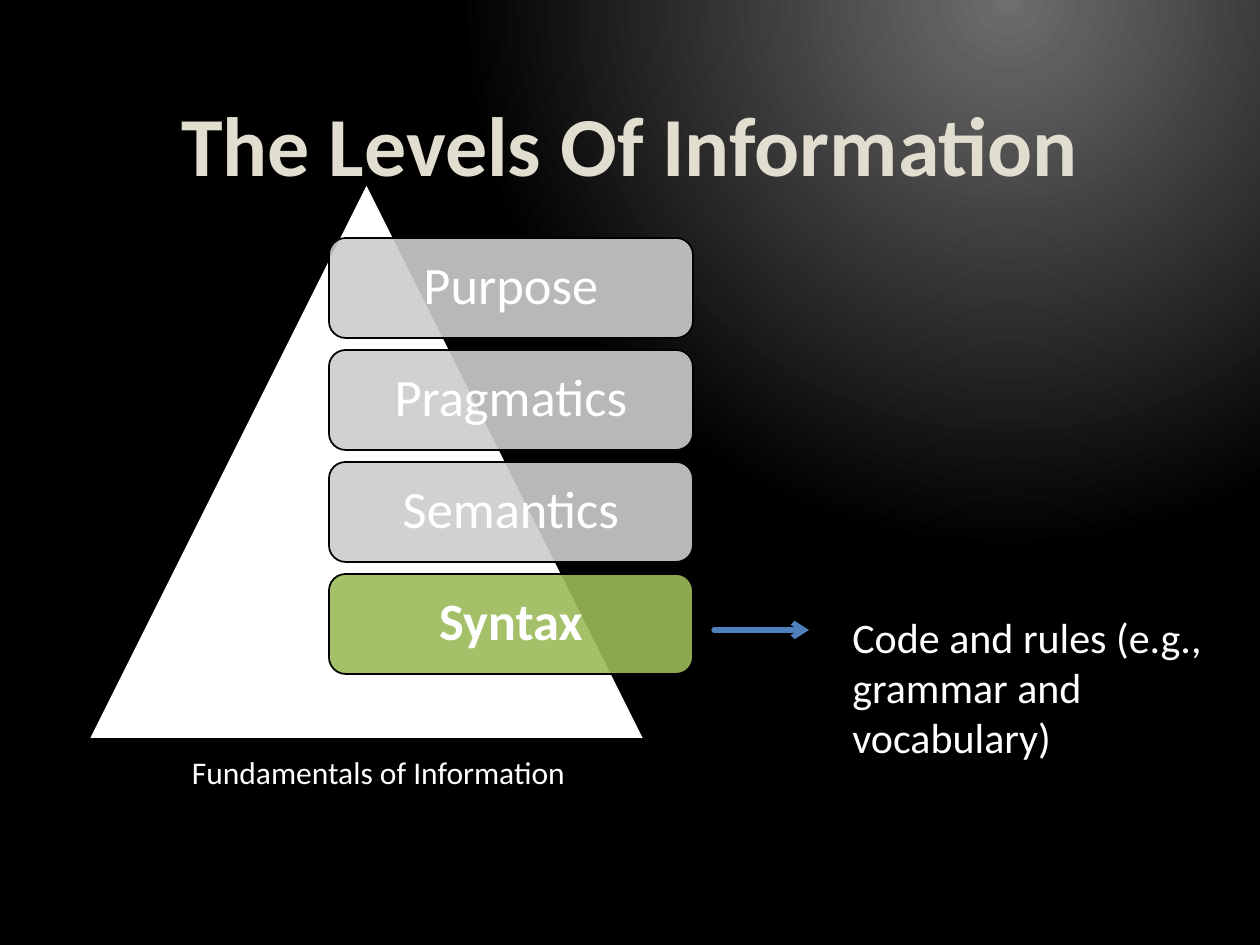
from lxml import etree
from pptx import Presentation
from pptx.dml.color import RGBColor
from pptx.enum.shapes import MSO_CONNECTOR, MSO_SHAPE
from pptx.enum.text import MSO_ANCHOR, PP_ALIGN
from pptx.oxml import parse_xml
from pptx.oxml.ns import nsdecls, qn
from pptx.util import Pt

COLORS = {
    "title": "E1DECF",
    "white": "FFFFFF",
    "black": "000000",
    "level": "CCCCCC",
    "current": "9BBB59",
    "arrow": "4F81BD",
}
GLOW = [(0, "707070"), (3, "696969"), (10, "5E5E5E"), (70, "000000"), (100, "000000")]
PX = 914400 / 126


def px(*lengths):
    return [round(length * PX) for length in lengths]


def write(shape, text, size, color="white", align=PP_ALIGN.CENTER, bold=False):
    shape.text_frame.word_wrap = True
    paragraph = shape.text_frame.paragraphs[0]
    paragraph.text = text
    paragraph.alignment = align
    paragraph.font.name = "Calibri"
    paragraph.font.size = Pt(size)
    paragraph.font.bold = bold
    paragraph.font.color.rgb = RGBColor.from_string(COLORS[color])


prs = Presentation()
prs.slide_width, prs.slide_height = px(1260, 945)
slide = prs.slides.add_slide(prs.slide_layouts[5])
shapes = slide.shapes

# Background: a glow from the upper right
stops = "".join(
    f'<a:gs pos="{pos * 1000}"><a:srgbClr val="{color}"/></a:gs>' for pos, color in GLOW
)
slide._element.cSld.insert(0, parse_xml(
    f'<p:bg {nsdecls("p", "a")}><p:bgPr><a:gradFill rotWithShape="1">'
    f'<a:gsLst>{stops}</a:gsLst><a:path path="circle">'
    '<a:fillToRect l="60000" t="-3000" r="0" b="200000"/></a:path>'
    '</a:gradFill><a:effectLst/></p:bgPr></p:bg>'
))

# Title
title = shapes.title
title.left, title.top, title.width, title.height = px(63, 42, 1134, 158)
write(title, "The Levels Of Information", 48, "title", bold=True)
title.text_frame.vertical_anchor = MSO_ANCHOR.BOTTOM

# Caption below the pyramid
caption = shapes.add_textbox(*px(53, 747, 651, 50))
write(caption, "Fundamentals of Information", 18)

# Pyramid
pyramid = shapes.add_shape(MSO_SHAPE.ISOSCELES_TRIANGLE, *px(87, 181, 559, 559))
pyramid.shadow.inherit = False
pyramid.fill.solid()
pyramid.fill.fore_color.rgb = RGBColor.from_string(COLORS["white"])
pyramid.line.color.rgb = RGBColor.from_string(COLORS["black"])
pyramid.line.width = Pt(2.21)

# Levels, with the current one highlighted
for row, name in enumerate(["Purpose", "Pragmatics", "Semantics", "Syntax"]):
    current = name == "Syntax"
    level = shapes.add_shape(MSO_SHAPE.ROUNDED_RECTANGLE, *px(329, 238 + 112 * row, 364, 100))
    level.shadow.inherit = False
    level.fill.solid()
    level.fill.fore_color.rgb = RGBColor.from_string(COLORS["current" if current else "level"])
    fill_color = level._element.spPr.find(qn("a:solidFill"))[0]
    etree.SubElement(fill_color, qn("a:alpha"), val="90000")
    level.line.color.rgb = RGBColor.from_string(COLORS["black"])
    level.line.width = Pt(1)
    write(level, name, 30, bold=current)
    level.text_frame.vertical_anchor = MSO_ANCHOR.MIDDLE
    level.text_frame.paragraphs[0].line_spacing = 0.9

# Explanation of the current level
explanation = shapes.add_textbox(*px(840, 605, 378, 165))
write(explanation, "Code and rules (e.g., grammar and vocabulary)", 24, align=PP_ALIGN.LEFT)

arrow = shapes.add_connector(MSO_CONNECTOR.STRAIGHT, *px(714, 630, 809, 630))
arrow.line.color.rgb = RGBColor.from_string(COLORS["arrow"])
arrow.line.width = Pt(3)
arrow_line = arrow.line._get_or_add_ln()
arrow_line.set("cap", "rnd")
etree.SubElement(arrow_line, qn("a:tailEnd"), type="arrow")
etree.SubElement(arrow._element.spPr, qn("a:effectLst"))

prs.save("out.pptx")
